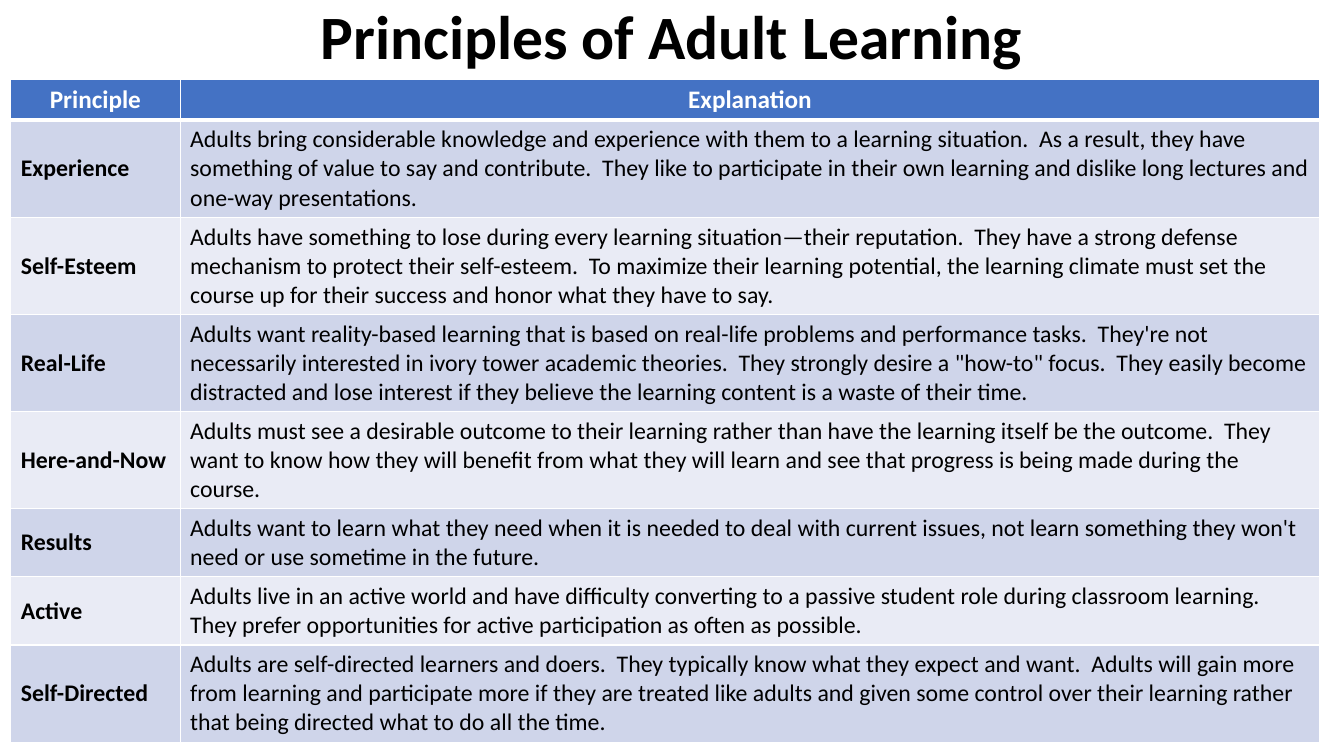
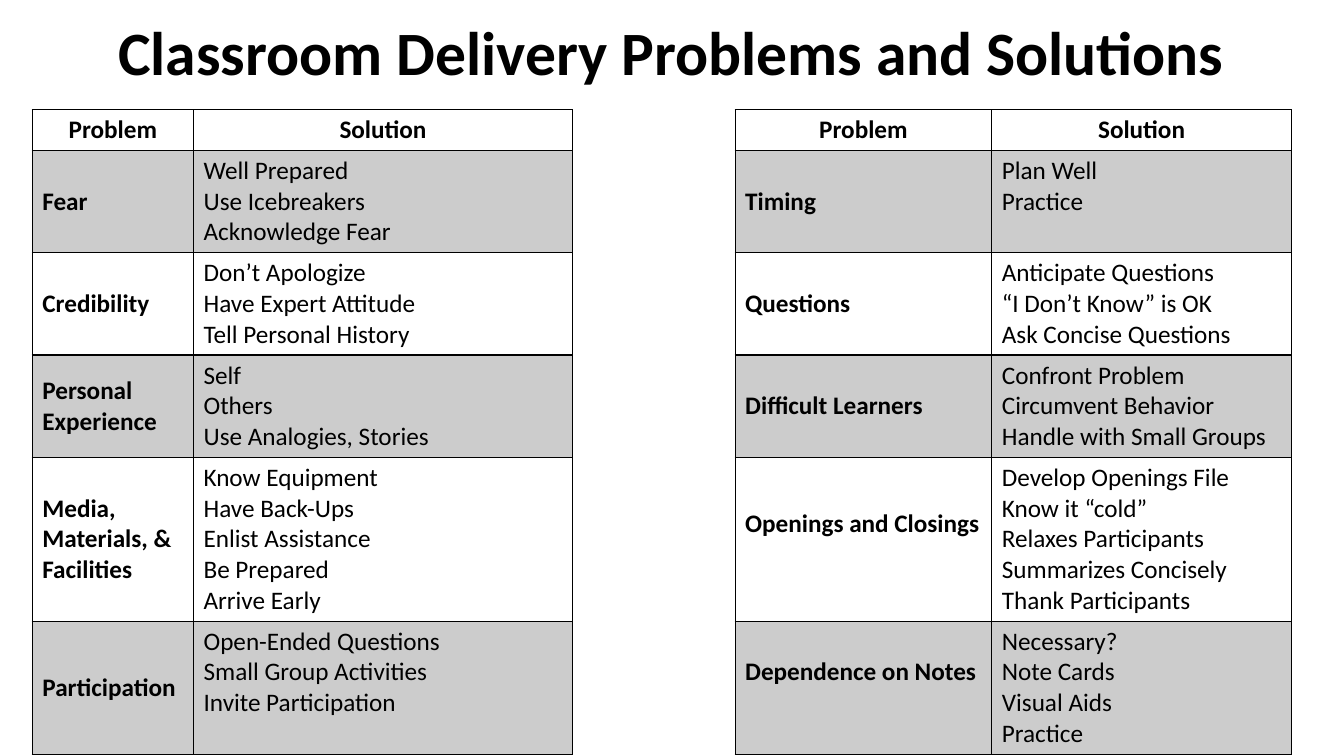
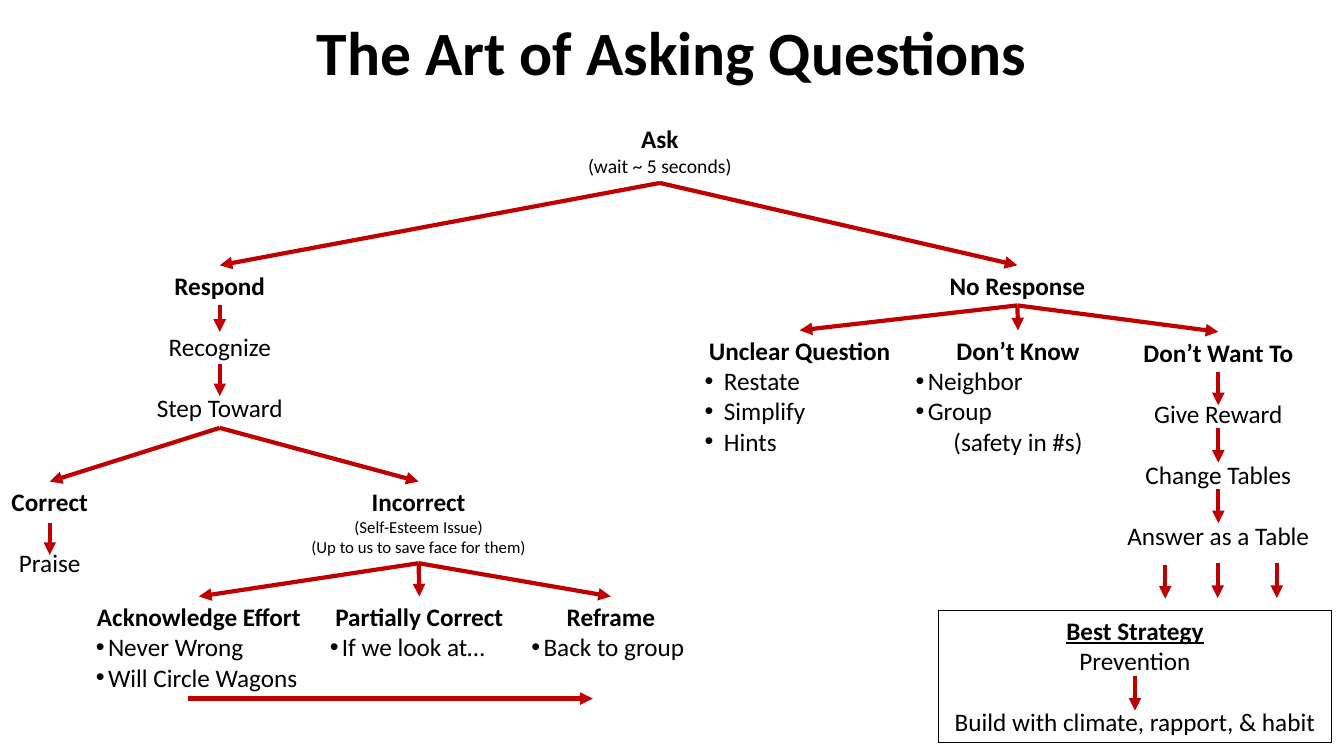
from dataclasses import dataclass

from lxml.etree import SubElement
from pptx import Presentation
from pptx.dml.color import RGBColor
from pptx.enum.shapes import MSO_CONNECTOR, MSO_SHAPE
from pptx.enum.text import MSO_ANCHOR, PP_ALIGN
from pptx.oxml.ns import qn
from pptx.util import Inches, Pt


@dataclass(frozen=True)
class Theme:
    font: str = "Calibri"
    ink: str = "000000"
    paper: str = "FFFFFF"
    blue: str = "4472C4"
    blue_dark_band: str = "CFD5EA"
    blue_light_band: str = "E9EBF5"
    grey_band: str = "CCCCCC"
    arrow: str = "C00000"
    title: int = 44
    body: int = 18
    dense: int = 17
    note: int = 14
    small: int = 12
    line_height: float = 1.22


@dataclass(frozen=True)
class TableLook:
    header_fill: str | None
    header_ink: str
    bands: tuple
    rule: str
    header_rule: float
    size: int
    label_columns: tuple


THEME = Theme()
WIDTH, HEIGHT = Inches(13.33), Inches(7.5)
BLUE_LOOK = TableLook(THEME.blue, THEME.paper, (THEME.blue_dark_band, THEME.blue_light_band),
                      THEME.paper, 3, THEME.dense, (0,))
GREY_LOOK = TableLook(None, THEME.ink, (THEME.grey_band, None),
                      THEME.ink, 1, THEME.body, (0, 3))

PRINCIPLES = [
    ("Principle", "Explanation"),
    ("Experience", "Adults bring considerable knowledge and experience with them to a learning situation.  As a result, they have something of value to say and contribute.  They like to participate in their own learning and dislike long lectures and one-way presentations."),
    ("Self-Esteem", "Adults have something to lose during every learning situation—their reputation.  They have a strong defense mechanism to protect their self-esteem.  To maximize their learning potential, the learning climate must set the course up for their success and honor what they have to say."),
    ("Real-Life", "Adults want reality-based learning that is based on real-life problems and performance tasks.  They're not necessarily interested in ivory tower academic theories.  They strongly desire a \"how-to\" focus.  They easily become distracted and lose interest if they believe the learning content is a waste of their time."),
    ("Here-and-Now", "Adults must see a desirable outcome to their learning rather than have the learning itself be the outcome.  They want to know how they will benefit from what they will learn and see that progress is being made during the course."),
    ("Results", "Adults want to learn what they need when it is needed to deal with current issues, not learn something they won't need or use sometime in the future."),
    ("Active", "Adults live in an active world and have difficulty converting to a passive student role during classroom learning.  They prefer opportunities for active participation as often as possible."),
    ("Self-Directed", "Adults are self-directed learners and doers.  They typically know what they expect and want.  Adults will gain more from learning and participate more if they are treated like adults and given some control over their learning rather that being directed what to do all the time."),
]

# None marks the open column between the two halves
PROBLEMS = [
    ("Problem", "Solution", None, "Problem", "Solution"),
    ("Fear", "Well Prepared\nUse Icebreakers\nAcknowledge Fear", None,
     "Timing", "Plan Well\nPractice"),
    ("Credibility", "Don’t Apologize\nHave Expert Attitude\nTell Personal History", None,
     "Questions", "Anticipate Questions\n“I Don’t Know” is OK\nAsk Concise Questions"),
    ("Personal Experience", "Self\nOthers\nUse Analogies, Stories", None,
     "Difficult Learners", "Confront Problem\nCircumvent Behavior\nHandle with Small Groups"),
    ("Media, Materials, & Facilities",
     "Know Equipment\nHave Back-Ups\nEnlist Assistance\nBe Prepared\nArrive Early", None,
     "Openings and Closings",
     "Develop Openings File\nKnow it “cold”\nRelaxes Participants\nSummarizes Concisely\nThank Participants"),
    ("Participation", "Open-Ended Questions\nSmall Group Activities\nInvite Participation", None,
     "Dependence on Notes", "Necessary?\nNote Cards\nVisual Aids\nPractice"),
]
RAISED_LABELS = ("Openings and Closings", "Dependence on Notes")

# Heading: (box in percent of the slide, [(kind, text)], arrows between lines in percent below its top)
QUESTION_NODES = {
    "Ask": ((41.3, 15.7, 15.6, 8.5), [("note", "(wait ~ 5 seconds)")], []),
    "Respond": ((10.4, 35.1, 11.9, 21.5), [("step", "Recognize"), ("step", "Step Toward")],
                [(5.3, 8.8), (13.1, 17.3)]),
    "Correct": ((-0.6, 63.7, 8.6, 13.5), [("step", "Praise")], [(5.5, 9.7)]),
    "Incorrect": ((22.3, 63.7, 17.7, 10.8),
                  [("small", "(Self-Esteem Issue)"),
                   ("small", "(Up to us to save face for them)")], []),
    "Acknowledge Effort": ((6.4, 78.9, 16.8, 13.5),
                           [("bullet", "Never Wrong"), ("bullet", "Will Circle Wagons")], []),
    "Partially Correct": ((23.8, 78.9, 14.8, 9.5), [("bullet", "If we look at…")], []),
    "Reframe": ((38.8, 78.9, 13.3, 9.5), [("bullet", "Back to group")], []),
    "No Response": ((69.8, 35.1, 11.8, 5.3), [], []),
    "Unclear Question": ((51.7, 43.7, 15.6, 17.5),
                         [("wide bullet", "Restate"), ("wide bullet", "Simplify"),
                          ("wide bullet", "Hints")], []),
    "Don’t Know": ((67.4, 43.7, 16.7, 17.5),
                   [("bullet", "Neighbor"), ("bullet", "Group"), ("plain", "(safety in #s)")], []),
    "Don’t Want To": ((82.3, 43.9, 16.7, 29.6),
                      [("step", "Give Reward"), ("step", "Change Tables"),
                       ("step", "Answer as a Table")],
                      [(5.3, 9.7), (12.7, 17.3), (20.8, 25.3)]),
    "Best Strategy": ((69.8, 80.7, 29.3, 17.5),
                      [("plain", "Prevention"), ("step", "Build with climate, rapport, & habit")],
                      [(8.7, 13.3)]),
}
BRANCHES = {
    "Ask": ("Respond", "No Response"),
    "Respond": ("Correct", "Incorrect"),
    "No Response": ("Unclear Question", "Don’t Know", "Don’t Want To"),
    "Incorrect": ("Acknowledge Effort", "Partially Correct", "Reframe"),
}
LOOSE_ARROWS = [
    (90.6, 74.5, 90.6, 79.1),
    (95, 74.5, 95, 79.1),
    (86.7, 74.7, 86.7, 79.2),
    (14, 92.4, 44.1, 92.4),
]
BULLET_INDENTS = {"bullet": 0.12, "wide bullet": 0.19}
NOTE_SIZES = {"note": THEME.note, "small": THEME.small}


def across(percent):
    return round(WIDTH * percent / 100)


def down(percent):
    return round(HEIGHT * percent / 100)


def place(box):
    left, top, width, height = box
    return across(left), down(top), across(width), down(height)


def line_inches(size):
    return size * THEME.line_height / 72


def style(paragraph, size, color=THEME.ink, bold=False, align=PP_ALIGN.LEFT):
    paragraph.alignment = align
    for run in paragraph.runs:
        run.font.name = THEME.font
        run.font.size = Pt(size)
        run.font.bold = bold
        run.font.color.rgb = RGBColor.from_string(color)


# Title
def add_title(slide, text, top=0.3, height=14.2):
    frame = slide.shapes.add_textbox(*place((6.9, top, 86.2, height))).text_frame
    frame.word_wrap = True
    frame.vertical_anchor = MSO_ANCHOR.MIDDLE
    frame.text = text
    heading = frame.paragraphs[0]
    heading.line_spacing = 0.9
    style(heading, THEME.title, bold=True, align=PP_ALIGN.CENTER)


# Tables
def set_border(cell, side, color, width):
    properties = cell._tc.get_or_add_tcPr()
    edge = SubElement(properties, qn(f"a:ln{side}"), w=str(Pt(width)))
    if color is None:
        SubElement(edge, qn("a:noFill"))
    else:
        fill = SubElement(edge, qn("a:solidFill"))
        SubElement(fill, qn("a:srgbClr"), val=color)


def set_cell(cell, text, look, row, column):
    is_header, is_label = row == 0, column in look.label_columns
    is_gap = text is None
    widths = {"L": 1, "R": 1, "T": look.header_rule if row == 1 else 1,
              "B": look.header_rule if is_header else 1}
    for side, width in widths.items():
        set_border(cell, side, None if is_gap and side in "TB" else look.rule, width)

    fill = look.header_fill if is_header else look.bands[(row - 1) % 2]
    if fill is None or is_gap:
        cell.fill.background()
    else:
        cell.fill.solid()
        cell.fill.fore_color.rgb = RGBColor.from_string(fill)
    if is_gap:
        return

    cell.text_frame.text = text
    if is_label and not is_header:
        cell.vertical_anchor = MSO_ANCHOR.MIDDLE
    if text in RAISED_LABELS:
        cell.margin_bottom = Inches(0.05 + line_inches(look.size))
    for paragraph in cell.text_frame.paragraphs:
        if is_header:
            style(paragraph, THEME.body, look.header_ink, True, PP_ALIGN.CENTER)
        else:
            style(paragraph, look.size, bold=is_label)


def add_grid(slide, left, top, columns, body_lines, rows, look):
    sizes = [line_inches(THEME.body)] + [n * line_inches(look.size) for n in body_lines]
    heights = [Inches(size + 0.1) for size in sizes]
    table = slide.shapes.add_table(len(rows), len(columns), across(left), down(top),
                                   across(sum(columns)), sum(heights)).table
    table.horz_banding = False
    for column, share in zip(table.columns, columns):
        column.width = across(share)
    for r, (height, texts) in enumerate(zip(heights, rows)):
        table.rows[r].height = height
        for c, text in enumerate(texts):
            set_cell(table.cell(r, c), text, look, r, c)


# Question tree
def add_arrow(slide, start=(0, 0), end=(0, 0), source=None, target=None):
    arrow = slide.shapes.add_connector(MSO_CONNECTOR.STRAIGHT, across(start[0]), down(start[1]),
                                       across(end[0]), down(end[1]))
    if source is not None:
        arrow.begin_connect(source, 2)
        arrow.end_connect(target, 0)
    arrow.line.color.rgb = RGBColor.from_string(THEME.arrow)
    arrow.line.width = Pt(3)
    SubElement(arrow.line._get_or_add_ln(), qn("a:tailEnd"), type="triangle")
    SubElement(arrow._element.spPr, qn("a:effectLst"))


def add_bullet(paragraph, indent):
    properties = paragraph._p.get_or_add_pPr()
    properties.set("marL", str(Inches(indent)))
    properties.set("indent", str(-Inches(indent)))
    SubElement(properties, qn("a:buFont"), typeface="Arial")
    SubElement(properties, qn("a:buChar"), char="•")


def add_node(slide, heading, box, lines, framed):
    if framed:
        node = slide.shapes.add_shape(MSO_SHAPE.RECTANGLE, *place(box))
        node.shadow.inherit = False
        node.fill.background()
        node.line.color.rgb = RGBColor.from_string(THEME.ink)
        node.line.width = Pt(0.75)
    else:
        node = slide.shapes.add_textbox(*place(box))
    frame = node.text_frame
    frame.word_wrap = True
    frame.vertical_anchor = MSO_ANCHOR.TOP
    frame.text = heading
    style(frame.paragraphs[0], THEME.body, bold=True, align=PP_ALIGN.CENTER)
    frame.paragraphs[0].runs[0].font.underline = framed
    for kind, text in lines:
        paragraph = frame.add_paragraph()
        paragraph.text = text
        bulleted = kind in BULLET_INDENTS
        style(paragraph, NOTE_SIZES.get(kind, THEME.body),
              align=PP_ALIGN.LEFT if bulleted else PP_ALIGN.CENTER)
        if bulleted:
            add_bullet(paragraph, BULLET_INDENTS[kind])
        elif kind == "step":
            paragraph.space_before = Pt(22)
    return node


def add_question_tree(slide):
    nodes = {}
    for heading, (box, lines, drops) in QUESTION_NODES.items():
        nodes[heading] = add_node(slide, heading, box, lines, heading == "Best Strategy")
        left, top, width, _ = box
        middle = left + width / 2
        for start, end in drops:
            add_arrow(slide, (middle, top + start), (middle, top + end))
    for parent, children in BRANCHES.items():
        for child in children:
            add_arrow(slide, source=nodes[parent], target=nodes[child])
    for x1, y1, x2, y2 in LOOSE_ARROWS:
        add_arrow(slide, (x1, y1), (x2, y2))


def main():
    deck = Presentation()
    deck.slide_width, deck.slide_height = WIDTH, HEIGHT
    principles, problems, questions = (
        deck.slides.add_slide(deck.slide_layouts[6]) for _ in range(3))

    add_title(principles, "Principles of Adult Learning", 0, 10.5)
    add_grid(principles, 0.8, 10.5, (12.6, 84.8), (3, 3, 3, 3, 2, 2, 3), PRINCIPLES, BLUE_LOOK)

    add_title(problems, "Classroom Delivery Problems and Solutions")
    add_grid(problems, 2.4, 14.5, (12, 28.2, 12.1, 19.1, 22.3), (3, 3, 3, 5, 4),
             PROBLEMS, GREY_LOOK)

    add_title(questions, "The Art of Asking Questions")
    add_question_tree(questions)

    deck.save("out.pptx")


if __name__ == "__main__":
    main()
